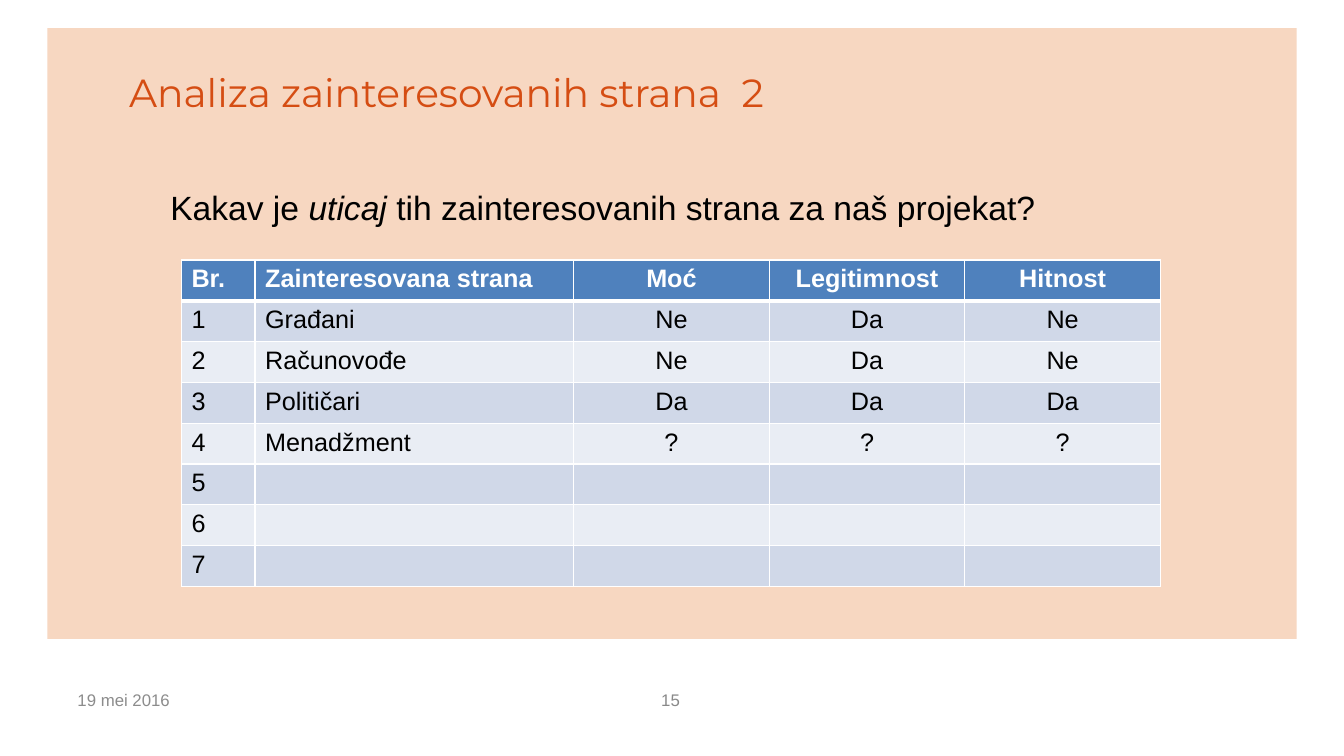
from lxml.etree import SubElement
from pptx import Presentation
from pptx.dml.color import RGBColor
from pptx.enum.shapes import MSO_SHAPE
from pptx.enum.text import MSO_ANCHOR, PP_ALIGN
from pptx.oxml.ns import qn
from pptx.util import Pt

PX = 9144
WHITE = RGBColor(0xFF, 0xFF, 0xFF)
BLACK = RGBColor(0, 0, 0)
PEACH = RGBColor(0xF7, 0xD7, 0xC1)
ORANGE = RGBColor(0xD5, 0x4D, 0x13)
BLUE = RGBColor(0x4F, 0x81, 0xBD)
STRIPES = (RGBColor(0xE9, 0xED, 0xF4), RGBColor(0xD0, 0xD8, 0xE8))
NUMBER_GREY = RGBColor(0x89, 0x89, 0x89)
DATE_GREY = RGBColor(0x8C, 0x8C, 0x8C)

COLUMNS = (73, 316, 194, 194, 194)
STAKEHOLDERS = (
    ("Br.", "Zainteresovana strana", "Moć", "Legitimnost", "Hitnost"),
    ("1", "Građani", "Ne", "Da", "Ne"),
    ("2", "Računovođe", "Ne", "Da", "Ne"),
    ("3", "Političari", "Da", "Da", "Da"),
    ("4", "Menadžment", "?", "?", "?"),
    ("5", "", "", "", ""),
    ("6", "", "", "", ""),
    ("7", "", "", "", ""),
)


def emu(box):
    return [length * PX for length in box]


def style(font, size, color, name="Arial", bold=False, italic=False):
    font.name = name
    font.size = Pt(size)
    font.color.rgb = color
    font.bold = bold
    font.italic = italic


def add_band(page, box):
    band = page.shapes.add_shape(MSO_SHAPE.RECTANGLE, *emu(box))
    band.shadow.inherit = False
    band.fill.solid()
    band.fill.fore_color.rgb = PEACH
    band.line.fill.background()
    page.shapes.title.element.addprevious(band.element)


def set_title(page, box, text):
    title = page.shapes.title
    title.left, title.top, title.width, title.height = emu(box)
    frame = title.text_frame
    frame.text = text
    frame.vertical_anchor = MSO_ANCHOR.MIDDLE
    para = frame.paragraphs[0]
    para.alignment = PP_ALIGN.LEFT
    style(para.runs[0].font, 28, ORANGE, "Montserrat")


def add_text(page, box, spans, size, color, anchor):
    frame = page.shapes.add_textbox(*emu(box)).text_frame
    frame.word_wrap = True
    frame.vertical_anchor = anchor
    for text, italic in spans:
        span = frame.paragraphs[0].add_run()
        span.text = text
        style(span.font, size, color, italic=italic)


def set_borders(cell, bottom):
    properties = cell._tc.get_or_add_tcPr()
    for index, (side, width) in enumerate((("lnL", 1), ("lnR", 1), ("lnT", 1), ("lnB", bottom))):
        line = properties.makeelement(qn(f"a:{side}"), {"w": str(Pt(width))})
        fill = SubElement(line, qn("a:solidFill"))
        SubElement(fill, qn("a:srgbClr"), val=str(WHITE))
        properties.insert(index, line)


def add_stakeholder_table(page, box):
    count = len(STAKEHOLDERS)
    table = page.shapes.add_table(count, len(COLUMNS), *emu(box)).table
    for column, width in zip(table.columns, COLUMNS):
        column.width = width * PX
    for row_index, values in enumerate(STAKEHOLDERS):
        header = row_index == 0
        table.rows[row_index].height = box[3] * PX // count
        for column_index, value in enumerate(values):
            cell = table.cell(row_index, column_index)
            cell.fill.solid()
            cell.fill.fore_color.rgb = BLUE if header else STRIPES[row_index % 2]
            cell.text = value
            para = cell.text_frame.paragraphs[0]
            para.alignment = PP_ALIGN.CENTER if column_index > 1 else PP_ALIGN.LEFT
            for span in para.runs:
                style(span.font, 18, WHITE if header else BLACK, bold=header)
            set_borders(cell, 3 if header else 1)


def build_page(deck):
    page = deck.slides.add_slide(deck.slide_layouts[5])
    add_band(page, (47, 28, 1239, 606))
    set_title(page, (118, 44, 1116, 95), "Analiza zainteresovanih strana  2")
    question = (("Kakav je ", False), ("uticaj ", True),
                ("tih zainteresovanih strana za naš projekat?", False))
    add_text(page, (159, 181, 939, 50), question, 24, BLACK, MSO_ANCHOR.TOP)
    add_stakeholder_table(page, (180, 258, 971, 324))
    add_text(page, (67, 674, 311, 40), [("19 mei 2016", False)], 12, DATE_GREY, MSO_ANCHOR.MIDDLE)
    add_text(page, (646, 674, 116, 40), [("15", False)], 12, NUMBER_GREY, MSO_ANCHOR.MIDDLE)


def main():
    deck = Presentation()
    deck.slide_width, deck.slide_height = emu((1333, 750))
    build_page(deck)
    deck.save("out.pptx")


if __name__ == "__main__":
    main()
